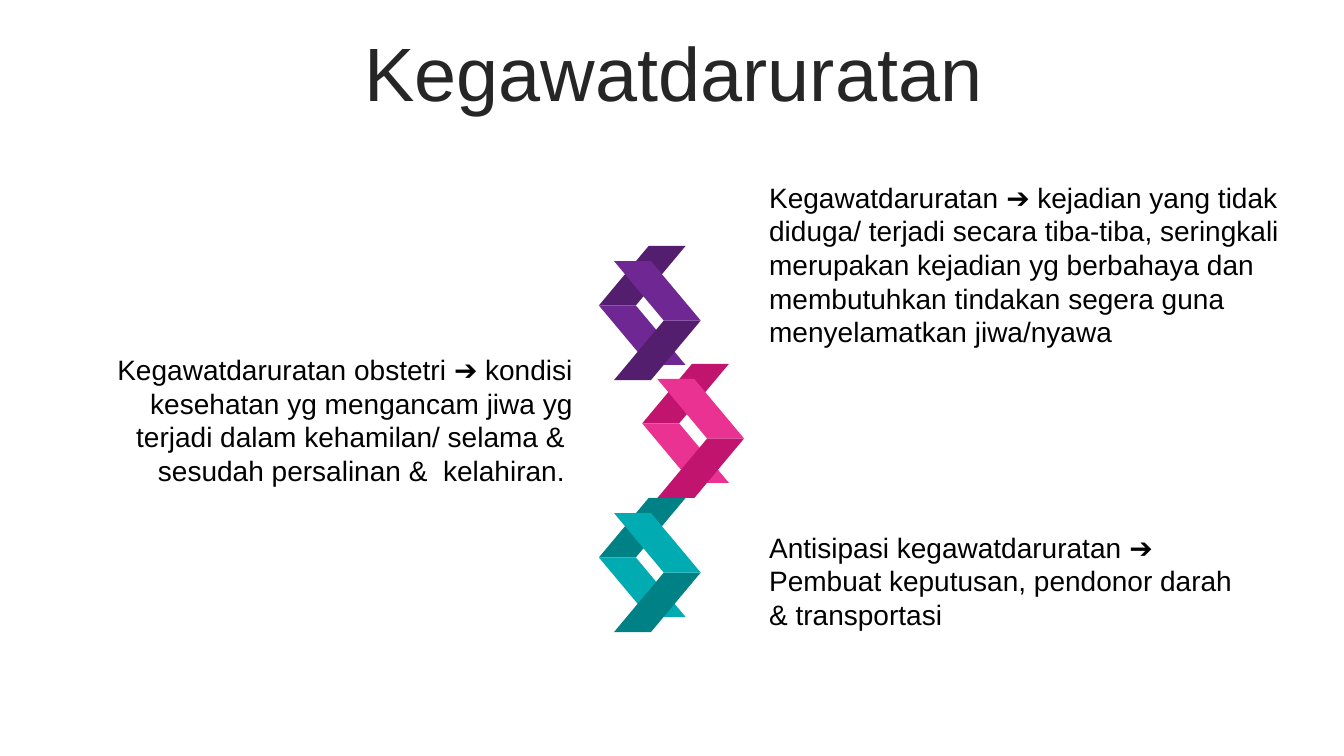
"""Build the Kegawatdaruratan slide with a chain of three folded links."""
from dataclasses import dataclass

from pptx import Presentation
from pptx.dml.color import RGBColor
from pptx.enum.shapes import MSO_SHAPE
from pptx.enum.text import MSO_ANCHOR, MSO_AUTO_SIZE, PP_ALIGN
from pptx.util import Inches, Pt

PARALLELOGRAM = MSO_SHAPE.PARALLELOGRAM
MIDDLE, TOP = MSO_ANCHOR.MIDDLE, MSO_ANCHOR.TOP
FIT, NO_FIT = MSO_AUTO_SIZE.SHAPE_TO_FIT_TEXT, MSO_AUTO_SIZE.NONE
LEFT, CENTER, RIGHT = PP_ALIGN.LEFT, PP_ALIGN.CENTER, PP_ALIGN.RIGHT

COLORS = {
    "title": "262626",
    "text": "000000",
    "purple": "6F2893",
    "purple_dark": "531E6E",
    "pink": "EA3293",
    "pink_dark": "C1146F",
    "teal": "00ACB2",
    "teal_dark": "008185",
}
FONT = "Arial"
BAND_WIDTH, BAND_HEIGHT, BAND_SLANT = 0.86, 0.59, 0.836
FOLD_OFFSET = 0.15


@dataclass
class Band:
    dx: float
    dy: float
    rotation: int
    flipped: bool


@dataclass
class Link:
    left: float
    top: float
    color: str


@dataclass
class TextBlock:
    text: str
    left: float
    top: float
    width: float
    height: float
    align: PP_ALIGN = LEFT
    size: int = 20
    color: str = "text"
    anchor: MSO_ANCHOR = TOP
    auto_size: MSO_AUTO_SIZE = FIT
    line_spacing: float = 1.0
    space_before: int = 0


BANDS = [
    Band(0, 0, 0, False),
    Band(0, BAND_HEIGHT, 0, True),
    Band(FOLD_OFFSET, FOLD_OFFSET + BAND_HEIGHT, 180, False),
    Band(FOLD_OFFSET, FOLD_OFFSET, 180, True),
]

LINKS = [
    Link(5.94, 2.44, "purple"),
    Link(6.37, 3.61, "pink"),
    Link(5.94, 4.94, "teal"),
]

TEXTS = [
    TextBlock("Kegawatdaruratan", 0.35, 0.37, 12.66, 0.79, CENTER, 54, "title",
              MIDDLE, NO_FIT, 0.9, 10),
    TextBlock("Kegawatdaruratan ➔ kejadian yang tidak diduga/ terjadi secara "
              "tiba-tiba, seringkali merupakan kejadian yg berbahaya dan "
              "membutuhkan tindakan segera guna menyelamatkan jiwa/nyawa",
              7.53, 1.74, 5.81, 1.78),
    TextBlock("Antisipasi kegawatdaruratan ➔ Pembuat keputusan, pendonor darah "
              "& transportasi", 7.53, 5.21, 4.83, 1.11),
    TextBlock("Kegawatdaruratan obstetri ➔ kondisi kesehatan yg mengancam jiwa "
              "yg terjadi dalam kehamilan/ selama &  sesudah persalinan &  "
              "kelahiran. ", 0.99, 3.45, 4.79, 1.45, RIGHT),
]


def add_link(shapes, link: Link) -> None:
    """Draw one folded link from four parallelogram bands."""
    for band in BANDS:
        s = shapes.add_shape(PARALLELOGRAM, Inches(link.left + band.dx),
                             Inches(link.top + band.dy),
                             Inches(BAND_WIDTH), Inches(BAND_HEIGHT))
        s.adjustments[0] = BAND_SLANT
        s.rotation = band.rotation
        if band.flipped:
            s.element.spPr.get_or_add_xfrm().set("flipH", "1")
        s.shadow.inherit = False
        s.fill.solid()
        shade = link.color if band.flipped else f"{link.color}_dark"
        s.fill.fore_color.rgb = RGBColor.from_string(COLORS[shade])
        s.line.fill.background()


def add_text(shapes, block: TextBlock) -> None:
    """Add one wrapped text box."""
    s = shapes.add_textbox(Inches(block.left), Inches(block.top),
                           Inches(block.width), Inches(block.height))
    tf = s.text_frame
    tf.word_wrap = True
    tf.auto_size = block.auto_size
    tf.vertical_anchor = block.anchor
    p = tf.paragraphs[0]
    p.text = block.text
    p.alignment = block.align
    p.line_spacing = block.line_spacing
    p.space_before = Pt(block.space_before)
    p.font.name = FONT
    p.font.size = Pt(block.size)
    p.font.color.rgb = RGBColor.from_string(COLORS[block.color])


def main() -> None:
    """Build and save the slide."""
    prs = Presentation()
    prs.slide_width, prs.slide_height = Inches(13.33), Inches(7.5)
    slide = prs.slides.add_slide(prs.slide_layouts[6])
    title, *notes = TEXTS
    add_text(slide.shapes, title)
    chain = slide.shapes.add_group_shape()
    for link in LINKS:
        add_link(chain.shapes, link)
    for note in notes:
        add_text(slide.shapes, note)
    prs.save("out.pptx")


if __name__ == "__main__":
    main()
